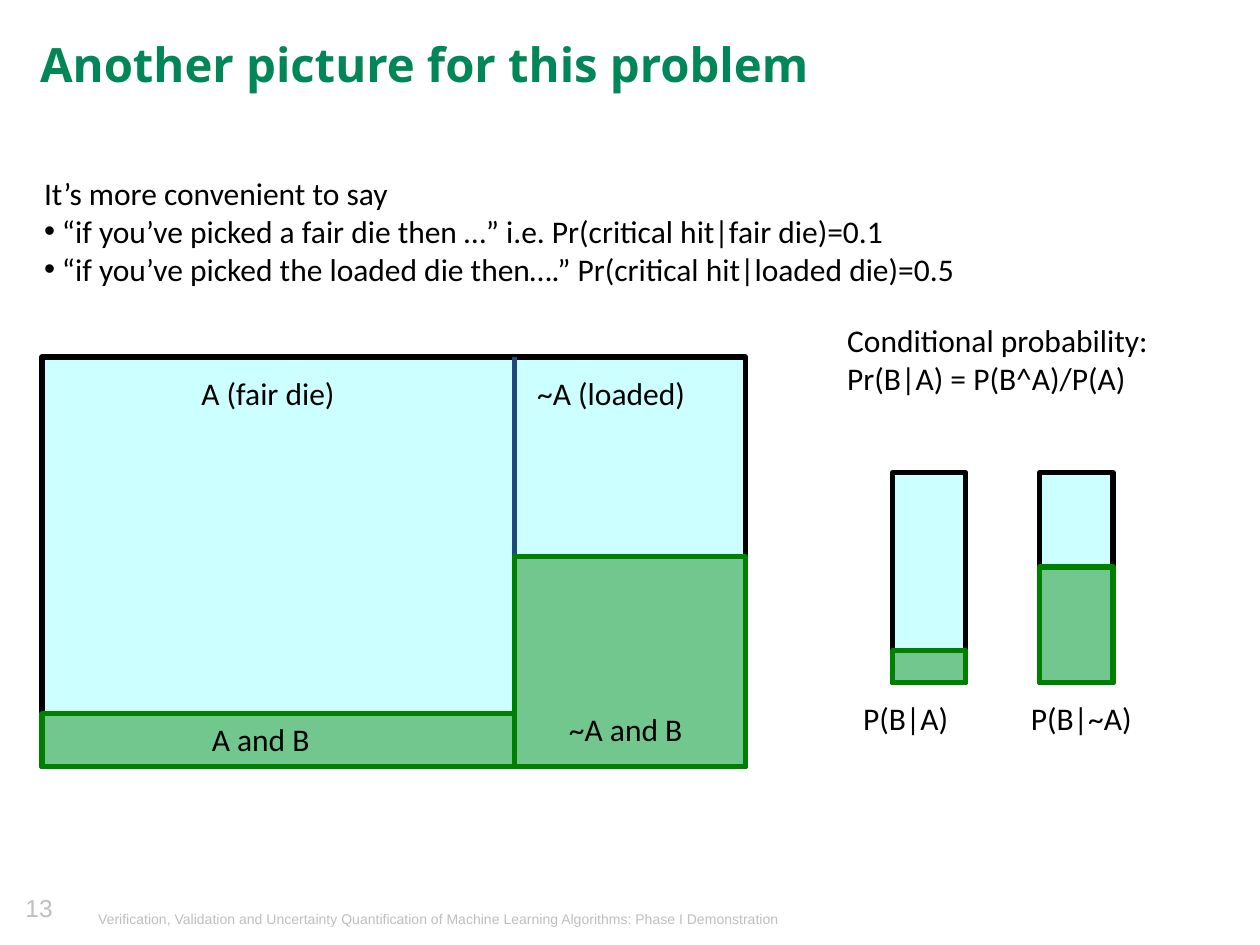
from dataclasses import dataclass
from lxml.etree import SubElement as Sub
from pptx import Presentation as Deck
from pptx.dml.color import RGBColor as Rgb
from pptx.enum.shapes import MSO_CONNECTOR as Link, MSO_SHAPE as Kind
from pptx.enum.text import MSO_ANCHOR as Anchor, PP_ALIGN as Align
from pptx.oxml.ns import qn
from pptx.util import Cm, Pt


@dataclass(frozen=True)
class Theme:
    ink: str = "000000"
    title: str = "008657"
    pale: str = "CCFFFF"
    green: str = "008000"
    blue: str = "1F497D"
    grey: str = "BFBFBF"
    body: str = "Calibri"
    head: str = "Open Sans"
    foot: str = "Arial"
    big: float = 27
    mid: float = 18
    page: float = 14
    small: float = 8
    edge: float = 3
    alpha: int = 44


class Page:
    """Draws styled elements on one slide."""

    def __init__(self, slide, theme):
        self.slide, self.theme = slide, theme

    def text(self, box, lines, size=None, font=None, color=None, bold=False,
             pad=True, align=Align.LEFT, space=None, dots=False):
        look = self.theme
        frame = self.slide.shapes.add_textbox(*map(Cm, box)).text_frame
        frame.word_wrap = True
        frame.vertical_anchor = Anchor.TOP
        if not pad:
            frame.margin_left = frame.margin_right = 0
            frame.margin_top = frame.margin_bottom = 0
        frame.text = "\n".join(lines)
        for row, para in enumerate(frame.paragraphs):
            para.alignment = align
            if space:
                para.line_spacing = space
            if dots and row:
                self.dot(para)
            for run in para.runs:
                run.font.size = Pt(size or look.mid)
                run.font.name = font or look.body
                run.font.bold = bold
                run.font.color.rgb = Rgb.from_string(color or look.ink)

    def dot(self, para):
        props = para._p.get_or_add_pPr()
        props.set("marL", str(Cm(0.36)))
        props.set("indent", str(-Cm(0.36)))
        Sub(props, qn("a:buFont"), typeface="Arial")
        Sub(props, qn("a:buChar"), char="•")

    def rect(self, left, base, wide, high, hit=False):
        look = self.theme
        box = map(Cm, (left, base - high, wide, high))
        shape = self.slide.shapes.add_shape(Kind.RECTANGLE, *box)
        shape.shadow.inherit = False
        shape.fill.solid()
        shape.fill.fore_color.rgb = Rgb.from_string(look.green if hit else look.pale)
        shape.line.color.rgb = Rgb.from_string(look.green if hit else look.ink)
        shape.line.width = Pt(look.edge)
        if hit:
            tint = shape.fill._xPr.find(qn("a:solidFill"))[0]
            Sub(tint, qn("a:alpha"), val=str(look.alpha * 1000))

    def line(self, *ends):
        wire = self.slide.shapes.add_connector(Link.STRAIGHT, *map(Cm, ends))
        wire.line.color.rgb = Rgb.from_string(self.theme.blue)
        wire.line.width = Pt(self.theme.edge)
        Sub(wire._element.spPr, qn("a:effectLst"))


def main():
    deck = Deck()
    deck.slide_width, deck.slide_height = Cm(25.4), Cm(19.05)
    look = Theme()
    page = Page(deck.slides.add_slide(deck.slide_layouts[6]), look)

    page.text((0.36, 18.06, 0.86, 0.84), ["13"], look.page, look.foot, look.grey,
              pad=False, align=Align.CENTER, space=0.9)
    page.text((1.73, 18.24, 15.6, 0.51),
              ["Verification, Validation and Uncertainty Quantification of "
               "Machine Learning Algorithms: Phase I Demonstration"],
              look.small, look.foot, look.grey)
    page.text((0.56, 0.48, 22.86, 1.65), ["Another picture for this problem"],
              look.big, look.head, look.title, bold=True, space=1.1)
    page.text((0.64, 3.39, 23.65, 2.79),
              ["It’s more convenient to say",
               "“if you’ve picked a fair die then …” i.e. Pr(critical hit|fair die)=0.1",
               "“if you’ve picked the loaded die then….” Pr(critical hit|loaded die)=0.5"],
              dots=True)
    page.text((16.83, 6.35, 7.7, 1.96),
              ["Conditional probability:", "Pr(B|A) = P(B^A)/P(A)"])

    left, base, wide, high = 0.85, 15.45, 14.18, 8.25
    fair = 9.52
    split = left + fair
    page.rect(left, base, wide, high)
    page.line(split, base - high, split, base)
    page.rect(left, base, fair, 1.06, hit=True)
    page.rect(split, base, wide - fair, 4.23, hit=True)

    for spot, part in ((17.99, 0.64), (20.96, 2.33)):
        page.rect(spot, 13.76, 1.48, 4.23)
        page.rect(spot, 13.76, 1.48, part, hit=True)

    for spot, top, span, word in (
        (3.81, 7.41, 3.86, "A (fair die)"),
        (10.58, 7.41, 4.27, "~A (loaded)"),
        (4.02, 14.39, 2.95, "A and B"),
        (11.22, 14.18, 3.45, "~A and B"),
        (17.15, 13.97, 2.54, "P(B|A)"),
        (20.53, 13.97, 3.05, "P(B|~A)"),
    ):
        page.text((spot, top, span, 1.09), [word])

    deck.save("out.pptx")


if __name__ == "__main__":
    main()
